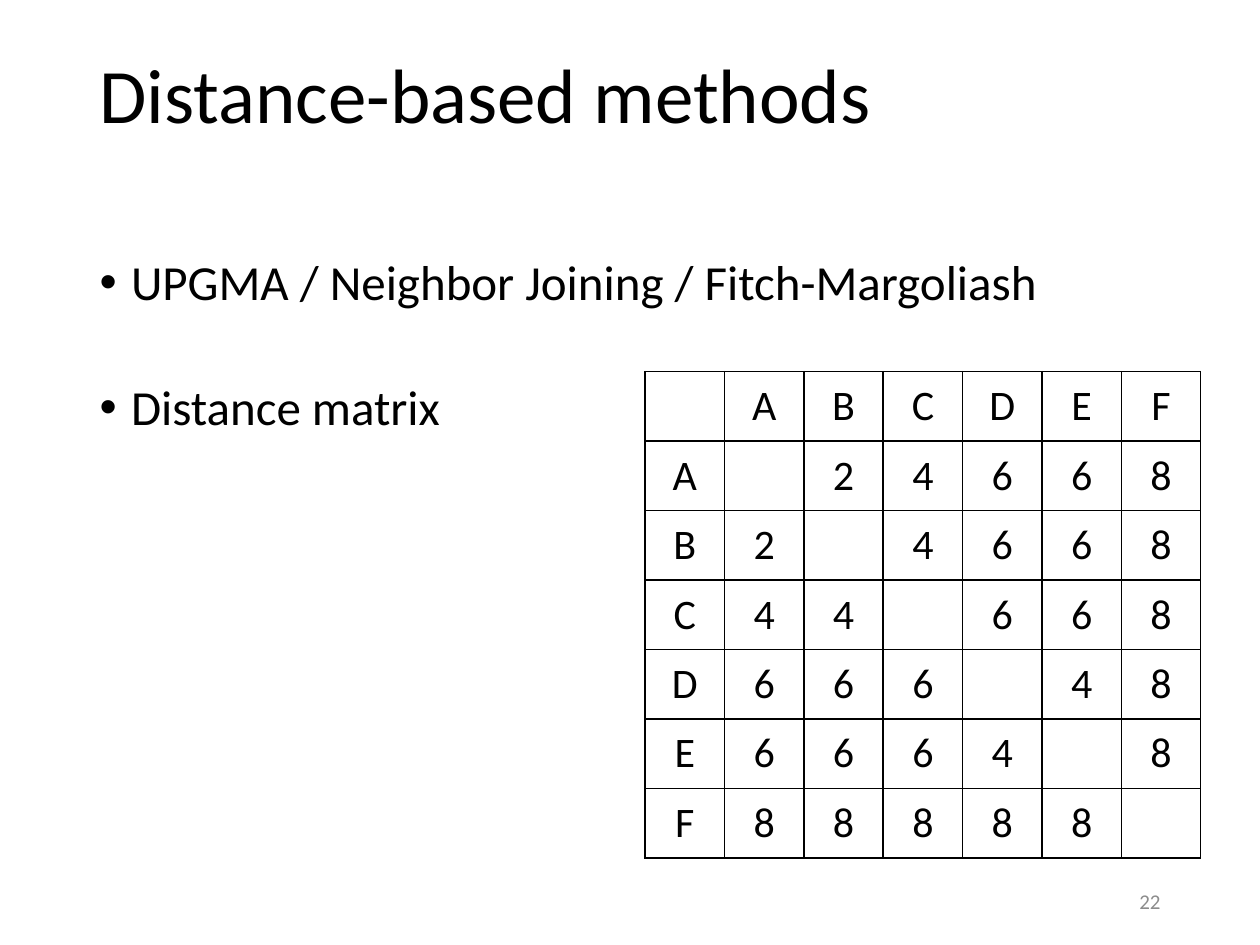
from dataclasses import dataclass

from lxml.etree import SubElement
from pptx import Presentation
from pptx.dml.color import RGBColor
from pptx.enum.text import MSO_ANCHOR as Anchor, MSO_AUTO_SIZE as AutoSize, PP_ALIGN as Align
from pptx.oxml.ns import qn
from pptx.util import Inches, Pt

FONT = "Calibri"
BLACK = "000000"
GRAY = "8C8C8C"
TAXA = "ABCDEF"
DISTANCES = {
    "AB": 2, "AC": 4, "AD": 6, "AE": 6, "AF": 8,
    "BC": 4, "BD": 6, "BE": 6, "BF": 8,
    "CD": 6, "CE": 6, "CF": 8,
    "DE": 4, "DF": 8,
    "EF": 8,
}


@dataclass
class Area:
    left: float
    top: float
    width: float
    height: float

    def lengths(self) -> list:
        return [Inches(n) for n in (self.left, self.top, self.width, self.height)]


@dataclass
class Bullet:
    text: str
    space_before: float


BULLETS = [
    Bullet("UPGMA / Neighbor Joining / Fitch-Margoliash", 10),
    Bullet("Distance matrix", 41),
]


def color(value: str) -> RGBColor:
    return RGBColor.from_string(value)


def add_span(para, text: str, size: float, ink: str = BLACK) -> None:
    span = para.add_run()
    span.text = text
    span.font.name = FONT
    span.font.size = Pt(size)
    span.font.color.rgb = color(ink)


def place(box, area: Area, anchor=Anchor.TOP):
    """Set the position and text settings of a box and return its text frame."""
    box.left, box.top, box.width, box.height = area.lengths()
    frame = box.text_frame
    frame.word_wrap = True
    frame.auto_size = AutoSize.NONE
    frame.vertical_anchor = anchor
    return frame


def add_title(page) -> None:
    para = place(page.shapes.title, Area(0.69, 0.4, 8.62, 1.45)).paragraphs[0]
    para.alignment = Align.LEFT
    para.line_spacing = 0.9
    add_span(para, "Distance-based methods", 44)


def add_bullets(page) -> None:
    frame = place(page.placeholders[1], Area(0.69, 2, 8.62, 4.76))
    for index, bullet in enumerate(BULLETS):
        para = frame.add_paragraph() if index else frame.paragraphs[0]
        para.line_spacing = 0.9
        para.space_before = Pt(bullet.space_before)
        props = para._p.get_or_add_pPr()
        props.set("marL", str(Inches(0.25)))
        props.set("indent", str(-Inches(0.25)))
        SubElement(props, qn("a:buFont")).set("typeface", "Arial")
        SubElement(props, qn("a:buChar")).set("char", "•")
        add_span(para, bullet.text, 28)


def add_page_number(page) -> None:
    area = Area(7.06, 6.95, 2.25, 0.4)
    box = page.shapes.add_textbox(*area.lengths())
    para = place(box, area, Anchor.MIDDLE).paragraphs[0]
    para.alignment = Align.RIGHT
    add_span(para, "22", 12, GRAY)


def add_borders(cell) -> None:
    props = cell._tc.get_or_add_tcPr()
    for index, side in enumerate(("lnL", "lnR", "lnT", "lnB")):
        line = props.makeelement(qn(f"a:{side}"), {"w": str(Pt(1))})
        fill = SubElement(line, qn("a:solidFill"))
        SubElement(fill, qn("a:srgbClr")).set("val", BLACK)
        props.insert(index, line)


def matrix_text(row: str, column: str) -> str:
    """Return a taxon name on the header row or column, else the distance."""
    if not row or not column:
        return row or column
    return str(DISTANCES.get("".join(sorted(row + column)), ""))


def add_matrix(page) -> None:
    labels = ["", *TAXA]
    count = len(labels)
    area = Area(5.12, 2.95, 4.41, 3.86)
    table = page.shapes.add_table(count, count, *area.lengths()).table
    table.first_row = table.horz_banding = False
    for column in table.columns:
        column.width = Inches(area.width / count)
    for row in table.rows:
        row.height = Inches(area.height / count)
    for r, row_label in enumerate(labels):
        for c, column_label in enumerate(labels):
            cell = table.cell(r, c)
            cell.fill.background()
            cell.vertical_anchor = Anchor.MIDDLE
            add_borders(cell)
            text = matrix_text(row_label, column_label)
            if text:
                para = cell.text_frame.paragraphs[0]
                para.alignment = Align.CENTER
                add_span(para, text, 24)


def main() -> None:
    deck = Presentation()
    deck.slide_width, deck.slide_height = Inches(10), Inches(7.5)
    page = deck.slides.add_slide(deck.slide_layouts[1])
    add_title(page)
    add_bullets(page)
    add_page_number(page)
    add_matrix(page)
    deck.save("out.pptx")


if __name__ == "__main__":
    main()
